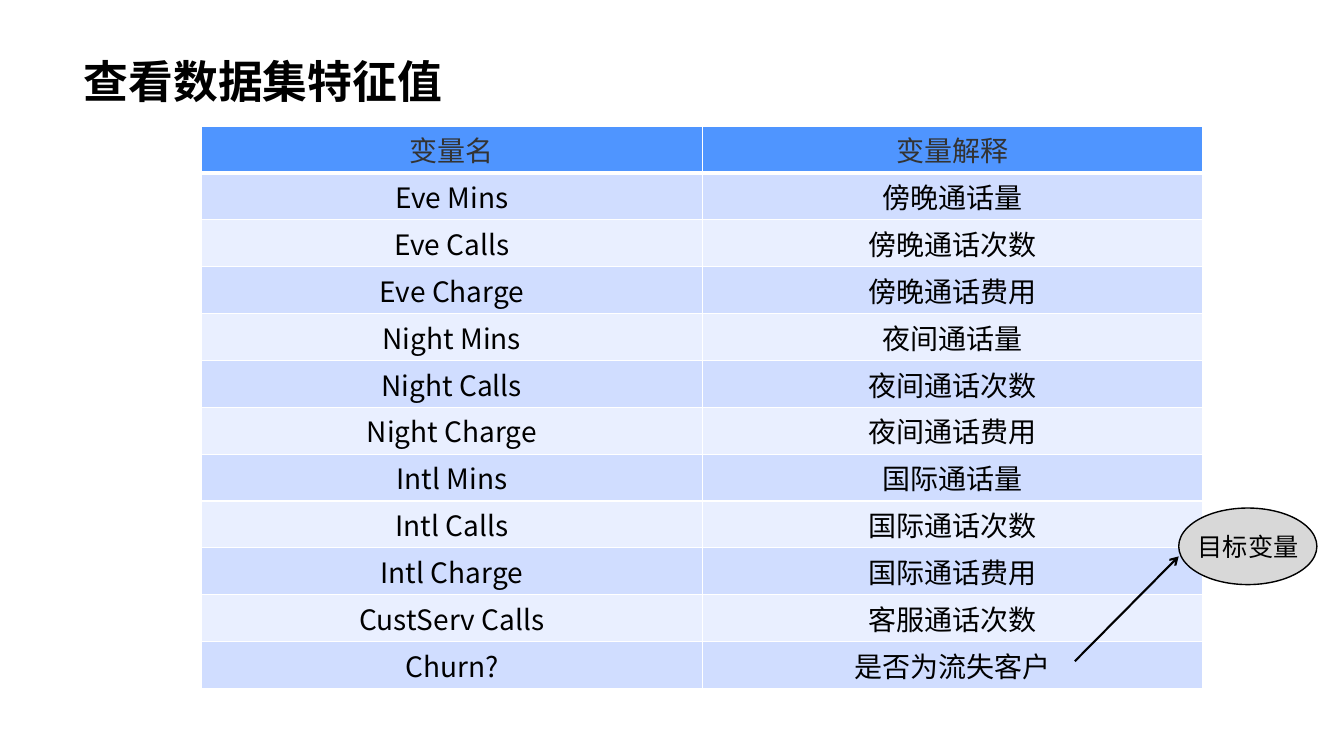
from dataclasses import dataclass

from lxml.etree import SubElement
from pptx import Presentation
from pptx.dml.color import RGBColor
from pptx.enum.shapes import MSO_CONNECTOR, MSO_SHAPE
from pptx.enum.text import MSO_ANCHOR, PP_ALIGN
from pptx.oxml import parse_xml
from pptx.oxml.ns import nsdecls, qn
from pptx.util import Inches, Pt

SLIDE_WIDTH, SLIDE_HEIGHT = Inches(13.33), Inches(7.5)


@dataclass(frozen=True)
class Theme:
    latin: str = "Arial"
    chinese: str = "Noto Sans CJK SC"
    title_size: int = 32
    table_size: int = 20
    label_size: int = 18
    ink: str = "000000"
    header_ink: str = "333333"
    header_fill: str = "4F95FF"
    bands: tuple[str, str] = ("D0DDFF", "E9EFFF")
    rule: str = "FFFFFF"
    target_fill: str = "D8D8D8"


@dataclass(frozen=True)
class Area:
    """Place and size as percentages of the slide."""
    left: float
    top: float
    width: float
    height: float

    def box(self) -> tuple[int, int, int, int]:
        return (across(self.left), down(self.top),
                across(self.width), down(self.height))


@dataclass(frozen=True)
class Variable:
    name: str
    meaning: str


THEME = Theme()
TITLE_AREA = Area(5.48, 0, 89.05, 14.93)
TABLE_AREA = Area(15, 16.67, 74.49, 74.4)
TARGET_AREA = Area(87.7, 67.2, 10.28, 10.13)
LABEL_AREA = Area(88.37, 69.6, 9, 5.33)
ARROW_START, ARROW_END = (79.97, 87.47), (87.7, 73.6)

HEADER = Variable("变量名", "变量解释")
VARIABLES = [
    Variable("Eve Mins", "傍晚通话量"),
    Variable("Eve Calls", "傍晚通话次数"),
    Variable("Eve Charge", "傍晚通话费用"),
    Variable("Night Mins", "夜间通话量"),
    Variable("Night Calls", "夜间通话次数"),
    Variable("Night Charge", "夜间通话费用"),
    Variable("Intl Mins", "国际通话量"),
    Variable("Intl Calls", "国际通话次数"),
    Variable("Intl Charge", "国际通话费用"),
    Variable("CustServ Calls", "客服通话次数"),
    Variable("Churn?", "是否为流失客户"),
]


def across(percent: float) -> int:
    return round(SLIDE_WIDTH * percent / 100)


def down(percent: float) -> int:
    return round(SLIDE_HEIGHT * percent / 100)


def write(frame, text: str, *, size: int, color: str = THEME.ink,
          font: str = THEME.latin, bold: bool = False,
          align=PP_ALIGN.LEFT, spacing: float = 1.0) -> None:
    paragraph = frame.paragraphs[0]
    paragraph.alignment = align
    paragraph.line_spacing = spacing
    run = paragraph.add_run()
    run.text = text
    run.font.size = Pt(size)
    run.font.bold = bold
    run.font.name = font
    run.font.color.rgb = RGBColor.from_string(color)
    SubElement(run.font._element, qn("a:ea"), typeface=THEME.chinese)


def add_text(slide, area: Area, text: str, *, anchor=MSO_ANCHOR.TOP,
             **text_format) -> None:
    frame = slide.shapes.add_textbox(*area.box()).text_frame
    frame.word_wrap = True
    frame.vertical_anchor = anchor
    write(frame, text, **text_format)


def set_borders(cell, top: int, bottom: int) -> None:
    properties = cell._tc.get_or_add_tcPr()
    widths = {"lnL": 1, "lnR": 1, "lnT": top, "lnB": bottom}
    for position, (side, width) in enumerate(widths.items()):
        properties.insert(position, parse_xml(
            f'<a:{side} {nsdecls("a")} w="{Pt(width)}"><a:solidFill>'
            f'<a:srgbClr val="{THEME.rule}"/></a:solidFill></a:{side}>'))


def add_variable_table(slide) -> None:
    rows = [HEADER, *VARIABLES]
    table = slide.shapes.add_table(len(rows), 2, *TABLE_AREA.box()).table
    for row, variable in enumerate(rows):
        is_header = row == 0
        fill = THEME.header_fill if is_header else THEME.bands[(row - 1) % 2]
        for column, text in enumerate((variable.name, variable.meaning)):
            cell = table.cell(row, column)
            cell.margin_left = cell.margin_right = 0
            cell.margin_top = cell.margin_bottom = 0
            cell.vertical_anchor = MSO_ANCHOR.MIDDLE
            cell.fill.solid()
            cell.fill.fore_color.rgb = RGBColor.from_string(fill)
            set_borders(cell, top=3 if row == 1 else 1,
                        bottom=3 if is_header else 1)
            write(cell.text_frame, text, size=THEME.table_size,
                  color=THEME.header_ink if is_header else THEME.ink,
                  font=THEME.chinese, align=PP_ALIGN.CENTER)


def add_target_arrow(slide) -> None:
    (start_x, start_y), (end_x, end_y) = ARROW_START, ARROW_END
    arrow = slide.shapes.add_connector(
        MSO_CONNECTOR.STRAIGHT, across(start_x), down(start_y),
        across(end_x), down(end_y))
    arrow.line.width = Pt(1.5)
    arrow.line.color.rgb = RGBColor.from_string(THEME.ink)
    SubElement(arrow.line._get_or_add_ln(), qn("a:tailEnd"), type="arrow")
    SubElement(arrow._element.spPr, qn("a:effectLst"))


def add_target_oval(slide) -> None:
    oval = slide.shapes.add_shape(MSO_SHAPE.OVAL, *TARGET_AREA.box())
    oval.shadow.inherit = False
    oval.fill.solid()
    oval.fill.fore_color.rgb = RGBColor.from_string(THEME.target_fill)
    oval.line.width = Pt(1)
    oval.line.color.rgb = RGBColor.from_string(THEME.ink)


def main() -> None:
    presentation = Presentation()
    presentation.slide_width = SLIDE_WIDTH
    presentation.slide_height = SLIDE_HEIGHT
    slide = presentation.slides.add_slide(presentation.slide_layouts[6])

    # Title
    add_text(slide, TITLE_AREA, "查看数据集特征值", anchor=MSO_ANCHOR.BOTTOM,
             size=THEME.title_size, bold=True, spacing=0.9)

    # Variables and their meanings
    add_variable_table(slide)

    # Target variable callout
    add_target_arrow(slide)
    add_target_oval(slide)
    add_text(slide, LABEL_AREA, "目标变量", size=THEME.label_size)

    presentation.save("out.pptx")


if __name__ == "__main__":
    main()
